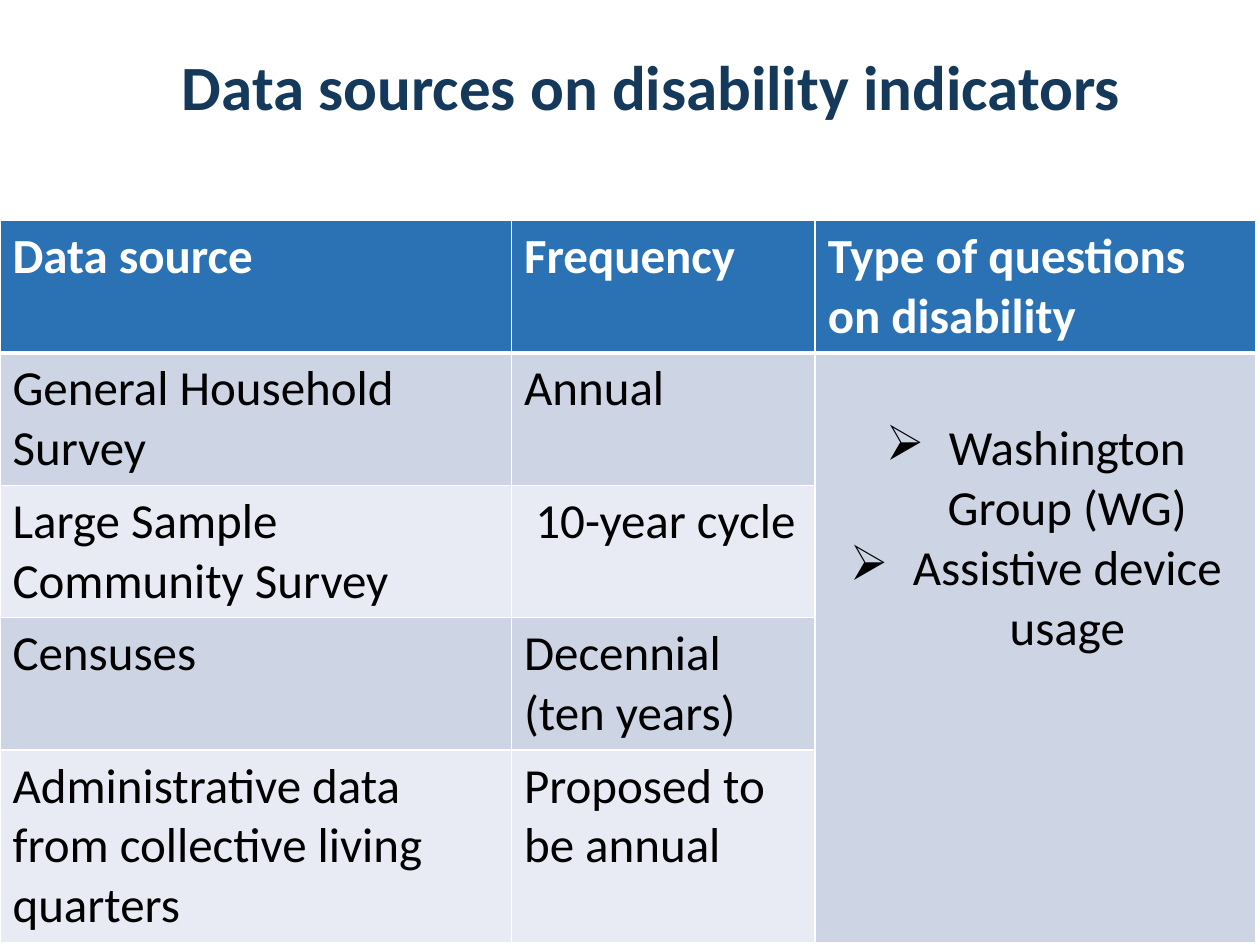
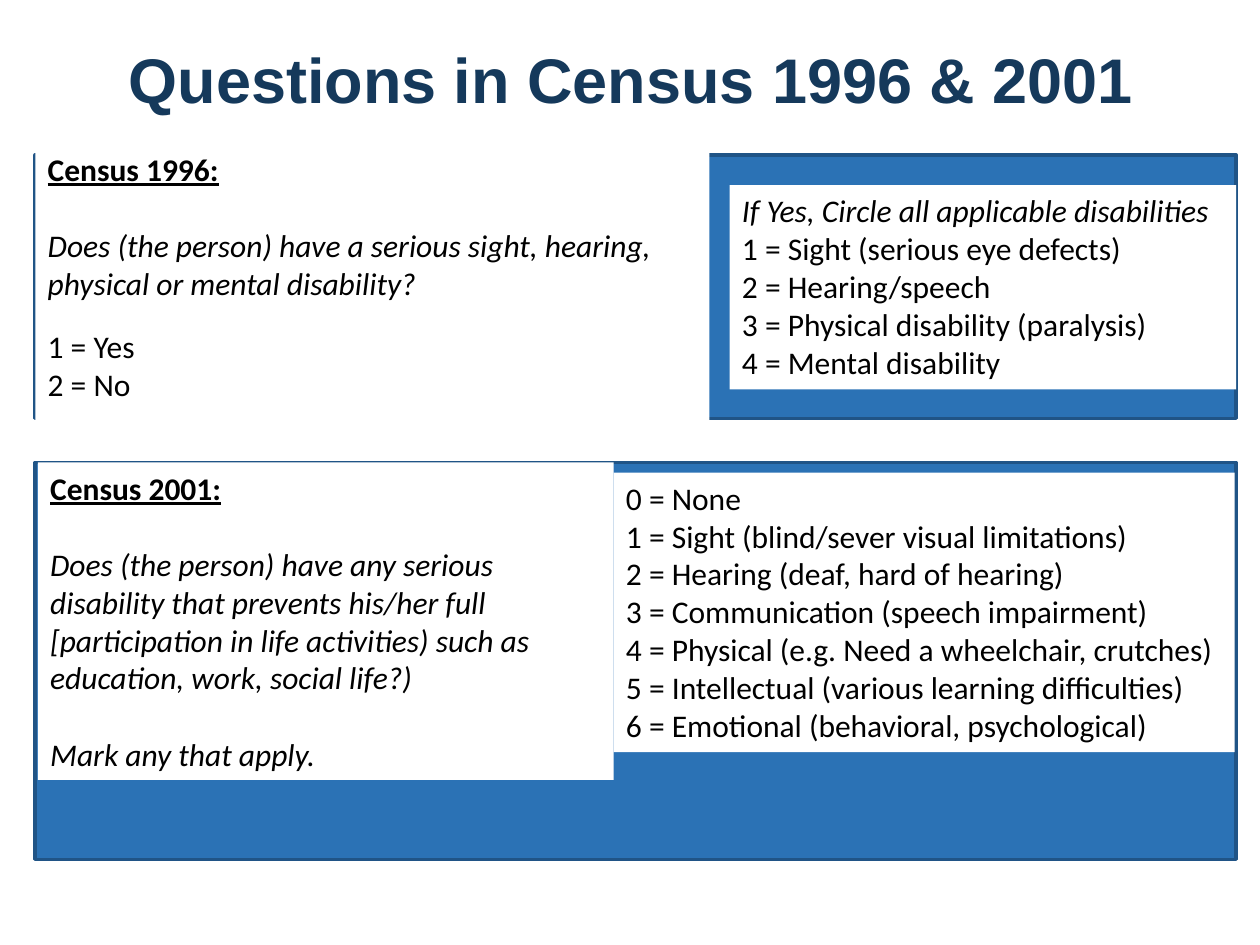
import pptx
import pptx.dml.color
import pptx.enum.shapes
import pptx.enum.text
import pptx.oxml
import pptx.oxml.ns
import pptx.util

COLORS = {"navy": "15395B", "blue": "2B72B5", "edge": "205486", "white": "FFFFFF",
          "black": "000000", "odd": "CDD5E5", "even": "E8EBF3"}
COLUMNS, ROWS = 100, 75
ALIGN = pptx.enum.text.PP_ALIGN
TITLE_ONLY = 5

LINE, HALF_LINE = 22, 14.6
HEADING = {"bold": True, "underline": True}
ITALIC = {"italic": True}


def color(name):
    return pptx.dml.color.RGBColor.from_string(COLORS[name])


class SlideBuilder:
    def __init__(self):
        self.deck = pptx.Presentation()
        self.deck.slide_width = pptx.util.Inches(10)
        self.deck.slide_height = pptx.util.Inches(7.5)
        self.page = None

    def across(self, columns):
        return round(self.deck.slide_width * columns / COLUMNS)

    def down(self, rows):
        return round(self.deck.slide_height * rows / ROWS)

    def area(self, left, top, width, height):
        return self.across(left), self.down(top), self.across(width), self.down(height)

    def span(self, para, text, ink="black", **values):
        span = para.add_run()
        span.text = text
        span.font.color.rgb = color(ink)
        for name, value in ({"name": "Calibri"} | values).items():
            setattr(span.font, name, value)

    def add_page(self, title, grid_area, font):
        self.page = self.deck.slides.add_slide(self.deck.slide_layouts[TITLE_ONLY])
        box = self.page.shapes.title
        box.left, box.top, box.width, box.height = self.area(*grid_area)
        box.text_frame.vertical_anchor = pptx.enum.text.MSO_ANCHOR.MIDDLE
        para = box.text_frame.paragraphs[0]
        para.alignment = ALIGN.CENTER
        self.span(para, title, "navy", name=font, size=pptx.util.Pt(36), bold=True)

    def rectangle(self, grid_area, fill, line=None):
        box = self.page.shapes.add_shape(
            pptx.enum.shapes.MSO_SHAPE.RECTANGLE, *self.area(*grid_area))
        box.shadow.inherit = False
        box.fill.solid()
        box.fill.fore_color.rgb = color(fill)
        if line:
            box.line.color.rgb = color(line)
            box.line.width = pptx.util.Pt(2)
        else:
            box.line.fill.background()
        return box

    def panel(self, grid_area, lines):
        """Draw a white box; each line is its text, points of space before and font values."""
        frame = self.rectangle(grid_area, "white").text_frame
        frame.word_wrap = True
        frame.vertical_anchor = pptx.enum.text.MSO_ANCHOR.TOP
        for index, (text, gap, values) in enumerate(lines):
            para = frame.add_paragraph() if index else frame.paragraphs[0]
            para.alignment = ALIGN.LEFT
            para.space_before = pptx.util.Pt(gap)
            self.span(para, text, size=pptx.util.Pt(18), **values)

    def borders(self, cell, bottom):
        properties = cell._tc.get_or_add_tcPr()
        for side, points in {"L": 1, "R": 1, "T": 1, "B": bottom}.items():
            properties.append(pptx.oxml.parse_xml(
                f'<a:ln{side} {pptx.oxml.ns.nsdecls("a")} w="{pptx.util.Pt(points)}">'
                f'<a:solidFill><a:srgbClr val="{COLORS["white"]}"/></a:solidFill></a:ln{side}>'))

    def bullet(self, para):
        properties = para._p.get_or_add_pPr()
        hang = pptx.util.Inches(0.5)
        properties.set("marL", str(hang))
        properties.set("indent", str(-hang))
        properties.append(pptx.oxml.parse_xml(
            f'<a:buChar {pptx.oxml.ns.nsdecls("a")} char="➢"/>'))

    def table(self, grid_area, widths, heights, records):
        table = self.page.shapes.add_table(
            len(heights), len(widths), *self.area(*grid_area)).table
        table.horz_banding = False
        for column, width in zip(table.columns, widths):
            column.width = self.across(width)
        for row, height in zip(table.rows, heights):
            row.height = self.down(height)
        for row, record in enumerate(records):
            header = row == 0
            for column in range(len(widths)):
                cell = table.cell(row, column)
                self.borders(cell, 3 if header else 1)
                cell.fill.solid()
                cell.fill.fore_color.rgb = color(
                    "blue" if header else "odd" if row % 2 else "even")
                if column < len(record):
                    self.span(cell.text_frame.paragraphs[0], record[column],
                              "white" if header else "black",
                              size=pptx.util.Pt(28), bold=header)
        return table

    def bulleted_cell(self, cell, items):
        for index, item in enumerate(items):
            para = cell.text_frame.add_paragraph() if index else cell.text_frame.paragraphs[0]
            para.alignment = ALIGN.CENTER
            self.bullet(para)
            self.span(para, item, size=pptx.util.Pt(28), bold=False)


def build_sources(builder):
    builder.add_page("Data sources on disability indicators", (6.7, 2.1, 90, 9.3), "Calibri")
    records = [
        ("Data source", "Frequency", "Type of questions on disability"),
        ("General Household Survey", "Annual"),
        ("Large Sample Community Survey", "10-year cycle"),
        ("Censuses", "Decennial (ten years)"),
        ("Administrative data from collective living quarters", "Proposed to be annual"),
    ]
    heights = [10.5] * 4 + [15.2]
    table = builder.table((0, 17.5, 99.6, sum(heights)), (40.6, 24.1, 35), heights, records)
    table.cell(2, 1).margin_left = builder.across(1.9)
    questions = table.cell(1, 2)
    questions.merge(table.cell(4, 2))
    questions.margin_top = builder.down(5.25)
    builder.bulleted_cell(questions, ["Washington Group (WG)", "Assistive device usage"])


def build_questions(builder):
    builder.add_page("Questions in Census 1996 & 2001", (5.1, 0, 90, 12.5), "Arial")
    for top, height in ((36.7, 31.5), (12.3, 20.9)):
        builder.rectangle((2.8, top, 95.3, height), "blue", "edge")
    builder.panel((2.8, 11.4, 53.5, 24.2), [
        ("Census 1996:", 0, HEADING),
        ("Does (the person) have a serious sight, hearing, physical or mental disability?",
         LINE, ITALIC),
        ("1 = Yes", HALF_LINE, {}),
        ("2 = No", 0, {}),
    ])
    builder.panel((57.9, 14.7, 40.2, 16.2), [
        ("If Yes, Circle all applicable disabilities", 0, ITALIC),
        ("1 = Sight (serious eye defects)", 0, {}),
        ("2 = Hearing/speech", 0, {}),
        ("3 = Physical disability (paralysis)", 0, {}),
        ("4 = Mental disability", 0, {}),
    ])
    answers = ["None", "Sight (blind/sever visual limitations)", "Hearing (deaf, hard of hearing)",
               "Communication (speech impairment)", "Physical (e.g. Need a wheelchair, crutches)",
               "Intellectual (various learning difficulties)",
               "Emotional (behavioral, psychological)"]
    builder.panel((48.7, 37.5, 49.3, 22.2),
                  [(f"{code} = {answer}", 0, {}) for code, answer in enumerate(answers)])
    builder.panel((3, 36.7, 45.7, 25.2), [
        ("Census 2001:", 0, HEADING),
        ("Does (the person) have any serious disability that prevents his/her full "
         "[participation in life activities) such as education, work, social life?)",
         LINE, ITALIC),
        ("Mark any that apply.", LINE, ITALIC),
    ])


def main():
    builder = SlideBuilder()
    build_sources(builder)
    build_questions(builder)
    builder.deck.save("out.pptx")


if __name__ == "__main__":
    main()
